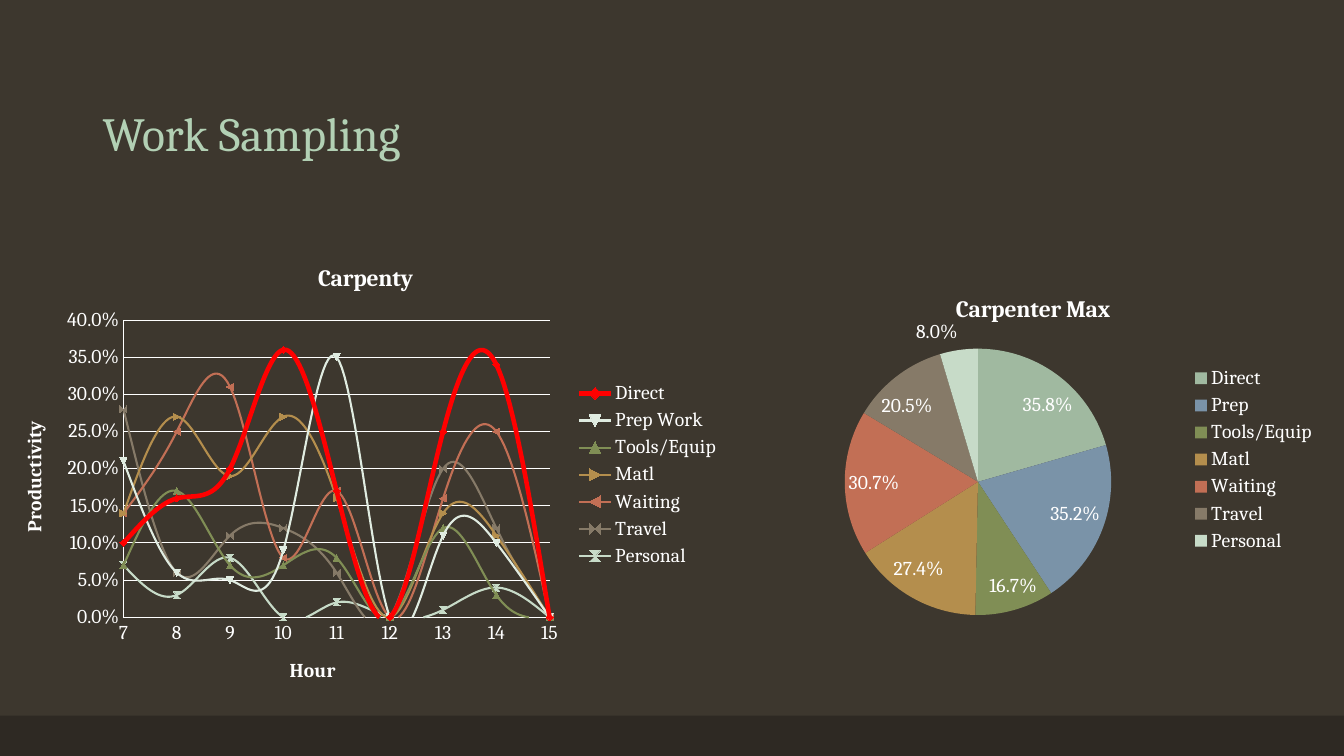
from dataclasses import dataclass

from lxml import etree
from pptx import Presentation
from pptx.chart.axis import ValueAxis
from pptx.chart.chart import Chart
from pptx.chart.data import CategoryChartData, XyChartData
from pptx.dml.color import RGBColor
from pptx.enum.chart import XL_CHART_TYPE as ChartType
from pptx.enum.chart import XL_LABEL_POSITION as LabelPosition
from pptx.enum.chart import XL_LEGEND_POSITION as LegendPosition
from pptx.enum.chart import XL_MARKER_STYLE as MarkerStyle
from pptx.enum.chart import XL_TICK_MARK as TickMark
from pptx.enum.shapes import MSO_SHAPE as Shape
from pptx.enum.text import MSO_ANCHOR as Anchor
from pptx.oxml.ns import qn
from pptx.slide import Slide
from pptx.text.text import TextFrame
from pptx.util import Inches, Pt

FONT = "Cambria"
BACKGROUND = RGBColor(0x3D, 0x37, 0x2E)
FOOTER = RGBColor(0x2E, 0x29, 0x23)
TITLE_GREEN = RGBColor(0xB2, 0xD0, 0xB4)
WHITE = RGBColor(0xFF, 0xFF, 0xFF)
RED = RGBColor(0xFF, 0x00, 0x00)
PALE = RGBColor(0xE0, 0xEC, 0xE1)
SAGE = RGBColor(0xA0, 0xB9, 0xA0)
BLUE = RGBColor(0x7A, 0x93, 0xA8)
OLIVE = RGBColor(0x80, 0x8E, 0x55)
GOLD = RGBColor(0xB4, 0x8E, 0x4D)
CORAL = RGBColor(0xC2, 0x6F, 0x55)
TAUPE = RGBColor(0x86, 0x7A, 0x68)
MINT = RGBColor(0xC7, 0xDB, 0xC8)

HOURS = range(7, 16)


@dataclass(frozen=True)
class Activity:
    name: str
    color: RGBColor
    shares: tuple[float, ...]
    width: float = 1.5


@dataclass(frozen=True)
class Slice:
    name: str
    color: RGBColor
    peak: float


ACTIVITIES = [
    Activity("Direct", RED, (0.1, 0.16, 0.2, 0.36, 0.17, 0, 0.25, 0.34, 0), 3.25),
    Activity("Prep Work", PALE, (0.21, 0.06, 0.05, 0.09, 0.35, 0, 0.11, 0.1, 0)),
    Activity("Tools/Equip", OLIVE, (0.07, 0.17, 0.07, 0.07, 0.08, 0, 0.12, 0.03, 0)),
    Activity("Matl", GOLD, (0.14, 0.27, 0.19, 0.27, 0.16, 0, 0.14, 0.11, 0)),
    Activity("Waiting", CORAL, (0.14, 0.25, 0.31, 0.08, 0.17, 0, 0.16, 0.25, 0)),
    Activity("Travel", TAUPE, (0.28, 0.06, 0.11, 0.12, 0.06, 0, 0.2, 0.12, 0)),
    Activity("Personal", MINT, (0.07, 0.03, 0.08, 0, 0.02, 0, 0.01, 0.04, 0)),
]
SLICES = [
    Slice("Direct", SAGE, 0.358),
    Slice("Prep", BLUE, 0.352),
    Slice("Tools/Equip", OLIVE, 0.167),
    Slice("Matl", GOLD, 0.274),
    Slice("Waiting", CORAL, 0.307),
    Slice("Travel", TAUPE, 0.205),
    Slice("Personal", MINT, 0.08),
]


def write(frame: TextFrame, text: str, size: float, color: RGBColor, bold: bool) -> None:
    frame.text = text
    font = frame.paragraphs[0].runs[0].font
    font.name, font.size, font.bold = FONT, Pt(size), bold
    font.color.rgb = color


def place_plot(chart: Chart, x: float, y: float, w: float, h: float) -> None:
    """Fix the inner plot area, in fractions of the chart."""
    plot_area = chart._chartSpace.chart.plotArea
    for old in plot_area.findall(qn("c:layout")):
        plot_area.remove(old)
    layout = etree.Element(qn("c:layout"))
    manual = etree.SubElement(layout, qn("c:manualLayout"))
    settings = {"layoutTarget": "inner", "xMode": "edge", "yMode": "edge",
                "x": x, "y": y, "w": w, "h": h}
    for tag, value in settings.items():
        etree.SubElement(manual, qn(f"c:{tag}")).set("val", str(value))
    plot_area.insert(0, layout)


def style_chart(chart: Chart, title: str) -> None:
    chart.font.name, chart.font.size = FONT, Pt(14)
    chart.font.color.rgb = WHITE
    chart.has_title = True
    write(chart.chart_title.text_frame, title, 16.8, WHITE, True)
    chart.chart_title.include_in_layout = False
    chart.has_legend = True
    chart.legend.position = LegendPosition.RIGHT
    chart.legend.include_in_layout = False


def style_axis(axis: ValueAxis, title: str, number_format: str, step: float) -> None:
    write(axis.axis_title.text_frame, title, 14, WHITE, True)
    axis.major_tick_mark = axis.minor_tick_mark = TickMark.NONE
    axis.major_unit = step
    axis.tick_labels.number_format = number_format
    axis.tick_labels.number_format_is_linked = False
    axis.format.line.color.rgb = WHITE
    axis.format.line.width = Pt(0.75)


def add_peak_pie(slide: Slide) -> None:
    data = CategoryChartData(number_format="0.0%")
    data.categories = [part.name for part in SLICES]
    data.add_series("Carpenter Max", [part.peak for part in SLICES])
    chart = slide.shapes.add_chart(ChartType.PIE, Inches(7.33), Inches(2.75),
                                   Inches(5.83), Inches(3.62), data).chart
    style_chart(chart, "Carpenter Max")
    place_plot(chart, 0.074, 0.196, 0.665, 0.73)
    plot = chart.plots[0]
    plot.vary_by_categories = True
    for index, part in enumerate(SLICES):
        fill = plot.series[0].points[index].format.fill
        fill.solid()
        fill.fore_color.rgb = part.color
    plot.has_data_labels = True
    labels = plot.data_labels
    labels.show_value, labels.show_percentage = True, False
    labels.number_format, labels.number_format_is_linked = "0.0%", False
    labels.position = LabelPosition.BEST_FIT
    labels.font.name, labels.font.size = FONT, Pt(14)
    labels.font.color.rgb = WHITE


def add_hourly_curves(slide: Slide) -> None:
    data = XyChartData(number_format="0.0%")
    for activity in ACTIVITIES:
        points = data.add_series(activity.name)
        for hour, share in zip(HOURS, activity.shares):
            points.add_data_point(hour, share)
    chart = slide.shapes.add_chart(ChartType.XY_SCATTER_SMOOTH, Inches(0), Inches(2.42),
                                   Inches(7.25), Inches(4.58), data).chart
    style_chart(chart, "Carpenty")
    place_plot(chart, 0.169, 0.165, 0.583, 0.644)
    chart.plots[0].vary_by_categories = False

    # Axes
    hour_axis, share_axis = chart.category_axis, chart.value_axis
    style_axis(hour_axis, "Hour", "General", 1)
    style_axis(share_axis, "Productivity", "0.0%", 0.05)
    hour_axis.minimum_scale, hour_axis.maximum_scale = HOURS[0], HOURS[-1]
    share_axis.minimum_scale, share_axis.maximum_scale = 0, 0.4
    hour_axis.has_major_gridlines = False
    share_axis.has_major_gridlines = True
    share_axis.major_gridlines.format.line.color.rgb = WHITE
    share_axis.major_gridlines.format.line.width = Pt(0.75)

    # Curves
    for curve, activity in zip(chart.plots[0].series, ACTIVITIES):
        curve.format.line.color.rgb = activity.color
        curve.format.line.width = Pt(activity.width)
        curve.marker.style = MarkerStyle.AUTOMATIC
        curve.marker.size = 5
        curve.marker.format.fill.solid()
        curve.marker.format.fill.fore_color.rgb = activity.color
        curve.marker.format.line.color.rgb = activity.color
        curve._element.find(qn("c:smooth")).set("val", "1")


def main() -> None:
    deck = Presentation()
    deck.slide_width, deck.slide_height = Inches(13.33), Inches(7.5)
    slide = deck.slides.add_slide(deck.slide_layouts[6])
    slide.background.fill.solid()
    slide.background.fill.fore_color.rgb = BACKGROUND

    # Footer band
    footer = slide.shapes.add_shape(Shape.RECTANGLE, Inches(0), Inches(7.1),
                                    Inches(13.33), Inches(0.4))
    footer.shadow.inherit = False
    footer.fill.solid()
    footer.fill.fore_color.rgb = FOOTER
    footer.line.fill.background()

    # Heading
    heading = slide.shapes.add_textbox(Inches(0.92), Inches(0.4),
                                       Inches(11.5), Inches(1.25)).text_frame
    heading.word_wrap = True
    heading.vertical_anchor = Anchor.BOTTOM
    write(heading, "Work Sampling", 34, TITLE_GREEN, False)
    heading.paragraphs[0].line_spacing = 0.9

    # Charts
    add_peak_pie(slide)
    add_hourly_curves(slide)
    deck.save("out.pptx")


if __name__ == "__main__":
    main()
